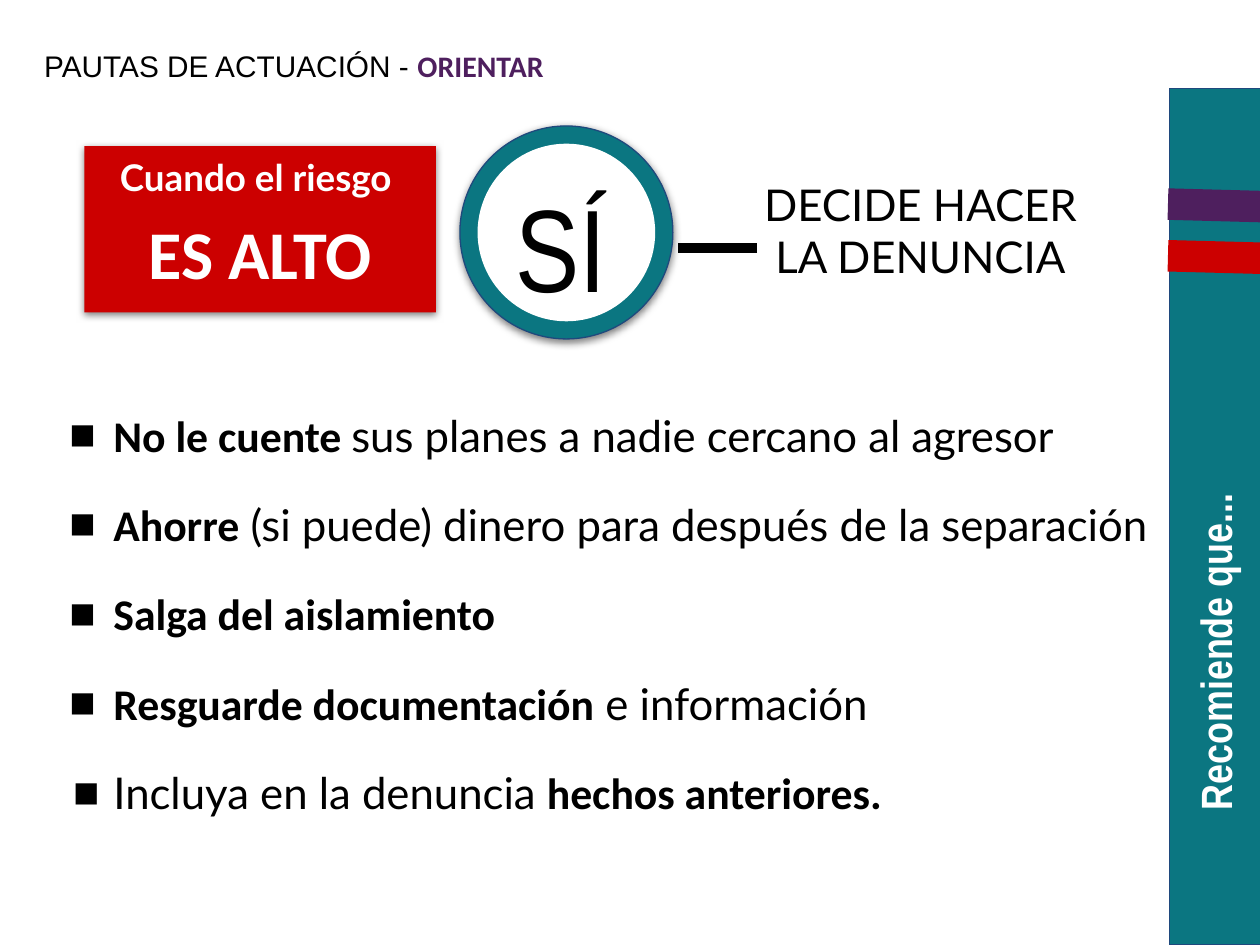
from lxml import etree
from pptx import Presentation
from pptx.dml.color import RGBColor
from pptx.enum.shapes import MSO_CONNECTOR, MSO_SHAPE
from pptx.enum.text import MSO_ANCHOR, MSO_AUTO_SIZE, PP_ALIGN
from pptx.oxml.ns import qn
from pptx.util import Inches, Pt

TOP, MIDDLE, BOTTOM = MSO_ANCHOR.TOP, MSO_ANCHOR.MIDDLE, MSO_ANCHOR.BOTTOM
LEFT, CENTER = PP_ALIGN.LEFT, PP_ALIGN.CENTER
RECTANGLE, OVAL = MSO_SHAPE.RECTANGLE, MSO_SHAPE.OVAL
STRAIGHT = MSO_CONNECTOR.STRAIGHT

COLORS = {
    "black": "000000",
    "white": "FFFFFF",
    "teal": "0B7681",
    "navy": "1F497D",
    "purple": "4E1F5E",
    "red": "CC0000",
}

# Each recommendation is a list of (text, bold) pieces.
RECOMMENDATIONS = [
    [("No le cuente ", True), ("sus planes a nadie cercano al agresor", False)],
    [("Ahorre", True), (" (si puede) dinero para después de la separación", False)],
    [("Salga del aislamiento", True)],
    [("Resguarde documentación", True), (" e información", False)],
    [("Incluya en la denuncia ", False), ("hechos anteriores.", True)],
]


def rgb(name):
    return RGBColor.from_string(COLORS[name])


def place(shape, left, top, width, height):
    shape.left, shape.top = Inches(left), Inches(top)
    shape.width, shape.height = Inches(width), Inches(height)


def set_frame(shape, anchor=TOP, inset=0.07):
    frame = shape.text_frame
    frame.word_wrap = True
    frame.auto_size = MSO_AUTO_SIZE.NONE
    frame.vertical_anchor = anchor
    frame.margin_left = frame.margin_right = Inches(inset)
    frame.margin_top = frame.margin_bottom = Inches(inset)
    return frame


def format_run(run, font, size, color="black", bold=False):
    run.font.name = font
    run.font.size = Pt(size)
    run.font.bold = bold
    run.font.color.rgb = rgb(color)


def add_run(paragraph, text, *style):
    run = paragraph.add_run()
    run.text = text
    format_run(run, *style)


def write_lines(frame, lines, alignment=CENTER, space_before=0):
    """Write one paragraph for each (text, font, size, color, bold) line."""
    frame.text = "\n".join(text for text, *_ in lines)
    for paragraph, (_, *style) in zip(frame.paragraphs, lines):
        paragraph.alignment = alignment
        paragraph.space_before = Pt(space_before)
        format_run(paragraph.runs[0], *style)


def add_soft_shadow(shape):
    effects = shape.element.spPr.find(qn("a:effectLst"))
    shadow = etree.SubElement(effects, qn("a:outerShdw"), blurRad=str(Pt(4.5)),
                              dist=str(Pt(1.5)), dir="5400000", rotWithShape="0")
    color = etree.SubElement(shadow, qn("a:srgbClr"), val=COLORS["black"])
    etree.SubElement(color, qn("a:alpha"), val="50000")


def add_filled_shape(slide, kind, box, fill, outline=None, shadow=False):
    shape = slide.shapes.add_shape(kind, *map(Inches, box))
    shape.fill.solid()
    shape.fill.fore_color.rgb = rgb(fill)
    if outline:
        shape.line.color.rgb = rgb(outline)
        shape.line.width = Pt(0.75)
    else:
        shape.line.fill.background()
    shape.shadow.inherit = False
    if shadow:
        add_soft_shadow(shape)
    return shape


def add_label(slide, box, *line):
    label = slide.shapes.add_textbox(*map(Inches, box))
    write_lines(set_frame(label), [line])


def add_line(slide, start, end, color, width):
    line = slide.shapes.add_connector(STRAIGHT, *map(Inches, start + end))
    line.line.color.rgb = rgb(color)
    line.line.width = Pt(width)
    etree.SubElement(line.element.spPr, qn("a:effectLst"))


def set_bullet(paragraph, indent, hanging):
    properties = paragraph._p.get_or_add_pPr()
    properties.set("marL", str(Inches(indent)))
    properties.set("indent", str(-Inches(hanging)))
    etree.SubElement(properties, qn("a:buFont"), typeface="Arial")
    etree.SubElement(properties, qn("a:buChar"), char="■")


def fill_title(title):
    place(title, 0.31, 0.35, 8.59, 0.35)
    paragraph = set_frame(title, BOTTOM, 0.04).paragraphs[0]
    paragraph.alignment = LEFT
    paragraph.line_spacing = 0.8
    add_run(paragraph, "PAUTAS DE ACTUACIÓN - ", "Arial", 17)
    add_run(paragraph, "ORIENTAR", "Calibri", 17, "purple", True)


def fill_recommendations(body):
    place(body, 0.48, 3.17, 8.7, 4.58)
    frame = set_frame(body)
    last = len(RECOMMENDATIONS) - 1
    for index, pieces in enumerate(RECOMMENDATIONS):
        paragraph = frame.add_paragraph() if index else frame.paragraphs[0]
        paragraph.space_before = Pt(21.1 if index else 0)
        set_bullet(paragraph, 0.35, 0.32 if index == last else 0.35)
        for text, bold in pieces:
            add_run(paragraph, text, "Calibri" if bold else "Lato", 25, "black", bold)


def add_sidebar(slide):
    add_filled_shape(slide, RECTANGLE, (9.28, 0.7, 0.75, 6.8), "teal", "navy")
    banner = add_filled_shape(slide, RECTANGLE, (7.07, 3.62, 5.14, 0.62), "teal")
    banner.rotation = 270
    write_lines(set_frame(banner, MIDDLE),
                [("Recomiende que...", "Arial Narrow", 25, "white", True)], LEFT)
    for top, color in ((1.62, "purple"), (2.03, "red")):
        add_line(slide, (9.27, top), (10.02, top + 0.02), color, 18)


def add_risk_box(slide):
    box = add_filled_shape(slide, RECTANGLE, (0.67, 1.16, 2.79, 1.32), "red", shadow=True)
    write_lines(set_frame(box), [
        ("Cuando el riesgo ", "Lato", 21, "white", True),
        ("ES ALTO", "Calibri", 39, "white", True),
    ], space_before=7)


def add_decision(slide):
    add_label(slide, (5.95, 1.34, 2.71, 1.27), "DECIDE HACER LA DENUNCIA", "Lato", 25)
    add_filled_shape(slide, OVAL, (3.65, 1, 1.69, 1.69), "teal", "navy", shadow=True)
    add_filled_shape(slide, OVAL, (3.79, 1.14, 1.41, 1.41), "white")
    add_label(slide, (3.56, 1.32, 1.78, 1.41), "SÍ", "Arial Narrow", 67)
    add_line(slide, (6.01, 1.97), (5.38, 1.97), "black", 6)


def main():
    presentation = Presentation()
    presentation.slide_width, presentation.slide_height = Inches(10), Inches(7.5)
    slide = presentation.slides.add_slide(presentation.slide_layouts[1])
    fill_title(slide.shapes.title)
    fill_recommendations(slide.placeholders[1])
    add_sidebar(slide)
    add_risk_box(slide)
    add_decision(slide)
    presentation.save("out.pptx")


if __name__ == "__main__":
    main()
